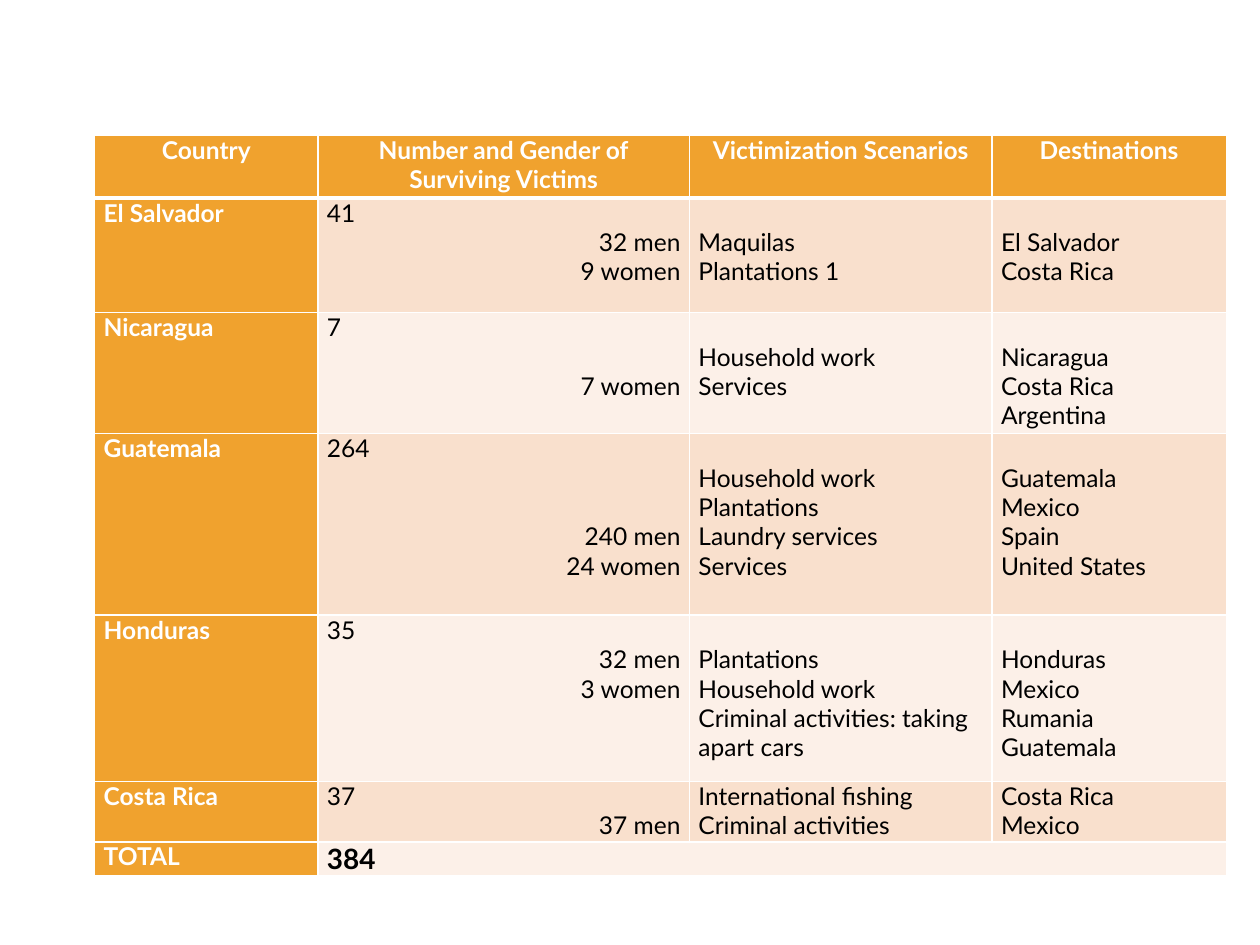
"""Build a slide with a table of surviving victims by country."""
from lxml import etree
from pptx import Presentation
from pptx.dml.color import RGBColor
from pptx.enum.text import PP_ALIGN
from pptx.oxml.ns import qn
from pptx.util import Cm, Pt

LEFT, CENTER, RIGHT = PP_ALIGN.LEFT, PP_ALIGN.CENTER, PP_ALIGN.RIGHT
WHITE = RGBColor(0xFF, 0xFF, 0xFF)
BLACK = RGBColor(0x00, 0x00, 0x00)
ORANGE = RGBColor(0xF0, 0xA2, 0x2E)
BANDS = (RGBColor(0xF9, 0xE0, 0xCD), RGBColor(0xFC, 0xF0, 0xE8))
FONT = "Lato"
LINE = Pt(16.8)

HEADINGS = [
    ["Country"],
    ["Number and Gender of", "Surviving Victims"],
    ["Victimization Scenarios"],
    ["Destinations"],
]
COUNTRIES = [
    {"name": "El Salvador", "victims": "41", "genders": ["32 men", "9 women"],
     "scenarios": ["Maquilas", "Plantations 1"],
     "destinations": ["El Salvador", "Costa Rica"], "gender_gap": 0, "list_gap": 1},
    {"name": "Nicaragua", "victims": "7", "genders": ["7 women"],
     "scenarios": ["Household work", "Services"],
     "destinations": ["Nicaragua", "Costa Rica", "Argentina"],
     "gender_gap": 1, "list_gap": 1},
    {"name": "Guatemala", "victims": "264", "genders": ["240 men", "24 women"],
     "scenarios": ["Household work", "Plantations", "Laundry services", "Services"],
     "destinations": ["Guatemala", "Mexico", "Spain", "United States"],
     "gender_gap": 2, "list_gap": 1},
    {"name": "Honduras", "victims": "35", "genders": ["32 men", "3 women"],
     "scenarios": ["Plantations", "Household work",
                   "Criminal activities: taking apart cars"],
     "destinations": ["Honduras", "Mexico", "Rumania", "Guatemala"],
     "gender_gap": 0, "list_gap": 1},
    {"name": "Costa Rica", "victims": "37", "genders": ["37 men"],
     "scenarios": ["International fishing", "Criminal activities"],
     "destinations": ["Costa Rica", "Mexico"], "gender_gap": 0, "list_gap": 0},
]
TOTAL = ("TOTAL", "384")
COLUMN_WIDTHS = [4.5, 7.49, 6.1, 4.72]
ROW_HEIGHTS = [1.27, 2.31, 2.44, 3.66, 3.35, 1.22, 0.69]


def set_borders(cell, widths):
    properties = cell._tc.get_or_add_tcPr()
    for side, width in zip("LRTB", widths):
        line = etree.SubElement(properties, qn(f"a:ln{side}"), w=str(Pt(width)))
        fill = etree.SubElement(line, qn("a:solidFill"))
        etree.SubElement(fill, qn("a:srgbClr"), val=str(WHITE))


def write(cell, lines, fill, color=BLACK, bold=False, align=LEFT, size=14, gap=0):
    cell.margin_left = cell.margin_right = Cm(0.18)
    cell.margin_top, cell.margin_bottom = gap * LINE, 0
    cell.fill.solid()
    cell.fill.fore_color.rgb = fill
    cell.text = "\n".join(lines)
    for para in cell.text_frame.paragraphs:
        para.alignment = align
        para.font.name, para.font.size = FONT, Pt(size)
        para.font.bold, para.font.color.rgb = bold, color


def main():
    deck = Presentation()
    deck.slide_width, deck.slide_height = Cm(25.4), Cm(19.05)
    page = deck.slides.add_slide(deck.slide_layouts[6])
    table = page.shapes.add_table(
        len(ROW_HEIGHTS), len(COLUMN_WIDTHS), Cm(1.91), Cm(2.72),
        Cm(sum(COLUMN_WIDTHS)), Cm(sum(ROW_HEIGHTS))).table
    table.first_col = True
    for column, width in zip(table.columns, COLUMN_WIDTHS):
        column.width = Cm(width)
    for index, (row, height) in enumerate(zip(table.rows, ROW_HEIGHTS)):
        row.height = Cm(height)
        for cell in row.cells:
            set_borders(cell, (1, 1, 3 if index == 1 else 1, 3 if index == 0 else 1))

    for column, lines in enumerate(HEADINGS):
        write(table.cell(0, column), lines, ORANGE, WHITE, True, CENTER)

    for row, country in enumerate(COUNTRIES, 1):
        band = BANDS[(row - 1) % 2]
        write(table.cell(row, 0), [country["name"]], ORANGE, WHITE, True)
        victims = table.cell(row, 1)
        write(victims, [country["victims"], *country["genders"]], band)
        genders = victims.text_frame.paragraphs[1:]
        for para in genders:
            para.alignment = RIGHT
        genders[0].space_before = country["gender_gap"] * LINE
        for column, key in enumerate(("scenarios", "destinations"), 2):
            write(table.cell(row, column), country[key], band, gap=country["list_gap"])

    last = len(ROW_HEIGHTS) - 1
    table.cell(last, 1).merge(table.cell(last, 3))
    write(table.cell(last, 0), [TOTAL[0]], ORANGE, WHITE, True)
    write(table.cell(last, 1), [TOTAL[1]], BANDS[1], bold=True, size=16)
    deck.save("out.pptx")


if __name__ == "__main__":
    main()
